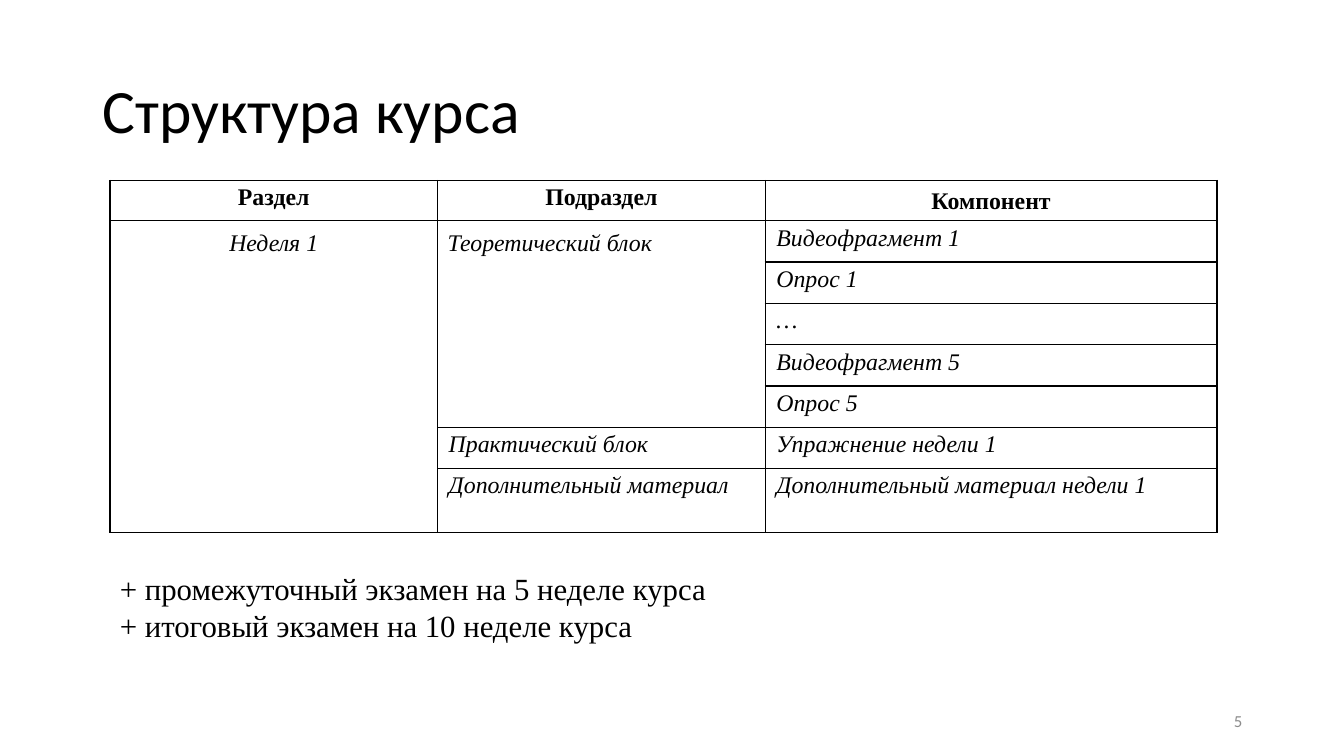
from lxml.etree import SubElement
from pptx import Presentation
from pptx.dml.color import RGBColor
from pptx.enum.text import MSO_ANCHOR, PP_ALIGN
from pptx.oxml.ns import qn
from pptx.util import Inches, Pt

SERIF = "Times New Roman"
HEADS = ["Раздел", "Подраздел", "Компонент"]
# Each section holds blocks, and each block holds its components
WEEK = "Неделя 1"
BLOCKS = [
    ("Теоретический блок",
     ["Видеофрагмент 1", "Опрос 1", "…", "Видеофрагмент 5", "Опрос 5"]),
    ("Практический блок", ["Упражнение недели 1"]),
    ("Дополнительный материал", ["Дополнительный материал недели 1"]),
]
EXAMS = ["+ промежуточный экзамен на 5 неделе курса",
         "+ итоговый экзамен на 10 неделе курса"]


def color(code):
    return RGBColor.from_string(code)


def write(frame, lines, size, font="Calibri", tint="000000", bold=False,
          italic=False, align=PP_ALIGN.LEFT, space=1.0, anchor=MSO_ANCHOR.TOP):
    frame.word_wrap = True
    frame.vertical_anchor = anchor
    for i, line in enumerate(lines):
        para = frame.paragraphs[0] if i == 0 else frame.add_paragraph()
        para.alignment, para.line_spacing = align, space
        run = para.add_run()
        run.text = line
        run.font.size, run.font.name = Pt(size), font
        run.font.bold, run.font.italic = bold, italic
        run.font.color.rgb = color(tint)


def add_title(slide, left, top, width, height):
    title = slide.shapes.title
    title.left, title.top = Inches(left), Inches(top)
    title.width, title.height = Inches(width), Inches(height)
    write(title.text_frame, ["Структура курса"], 44, space=0.9,
          anchor=MSO_ANCHOR.MIDDLE)


def add_text(slide, left, top, width, height, lines, size, **style):
    box = slide.shapes.add_textbox(Inches(left), Inches(top),
                                   Inches(width), Inches(height))
    write(box.text_frame, lines, size, **style)


def add_edges(cell, tint="000000"):
    props = cell._tc.get_or_add_tcPr()
    for i, side in enumerate(["a:lnL", "a:lnR", "a:lnT", "a:lnB"]):
        line = SubElement(props, qn(side), w=str(Pt(1)))
        fill = SubElement(line, qn("a:solidFill"))
        SubElement(fill, qn("a:srgbClr"), val=tint)
        props.insert(i, line)


def fill_cell(cell, text, side=0.11, edge=0, **style):
    cell.margin_left = cell.margin_right = Inches(side)
    cell.margin_top = cell.margin_bottom = Inches(edge)
    write(cell.text_frame, [text], 17, font=SERIF, space=1.15, **style)


def add_plan(slide, left, top, width, height):
    count = 1 + sum(len(parts) for _, parts in BLOCKS)
    shape = slide.shapes.add_table(count, len(HEADS), Inches(left),
                                   Inches(top), Inches(width), Inches(height))
    table = shape.table
    table.first_row = table.horz_banding = False

    # Two equal columns, then the rest; a taller last row
    narrow, first, row = 3.25, 0.4, 0.41
    widths = [narrow, narrow, width - 2 * narrow]
    heights = [first] + [row] * (count - 2)
    heights.append(height - sum(heights))
    for col, size in zip(table.columns, widths):
        col.width = Inches(size)
    for line, size in zip(table.rows, heights):
        line.height = Inches(size)
    for cell in table.iter_cells():
        cell.fill.background()
        add_edges(cell)

    # Header row
    for col, head in enumerate(HEADS):
        fill_cell(table.cell(0, col), head, edge=0.04 if col == 2 else 0,
                  bold=True, align=PP_ALIGN.CENTER)

    # Section, blocks and components
    table.cell(1, 0).merge(table.cell(count - 1, 0))
    fill_cell(table.cell(1, 0), WEEK, side=0.1, edge=0.05, italic=True,
              align=PP_ALIGN.CENTER)
    start = 1
    for name, parts in BLOCKS:
        block = table.cell(start, 1)
        tall = len(parts) > 1
        if tall:
            block.merge(table.cell(start + len(parts) - 1, 1))
        fill_cell(block, name, side=0.1 if tall else 0.11,
                  edge=0.05 if tall else 0, italic=True)
        for i, part in enumerate(parts):
            fill_cell(table.cell(start + i, 2), part, italic=True)
        start += len(parts)


def main():
    prs = Presentation()
    prs.slide_width, prs.slide_height = Inches(13.33), Inches(7.5)
    slide = prs.slides.add_slide(prs.slide_layouts[5])
    add_title(slide, 0.92, 0.4, 11.5, 1.45)
    add_plan(slide, 1.09, 1.79, 10.98, 3.49)
    # Exams and page number
    add_text(slide, 1.09, 5.6, 9.31, 0.84, EXAMS, 22, font=SERIF)
    add_text(slide, 9.42, 6.95, 3, 0.4, ["5"], 12, tint="8C8C8C",
             align=PP_ALIGN.RIGHT, anchor=MSO_ANCHOR.MIDDLE)
    prs.save("out.pptx")


if __name__ == "__main__":
    main()
